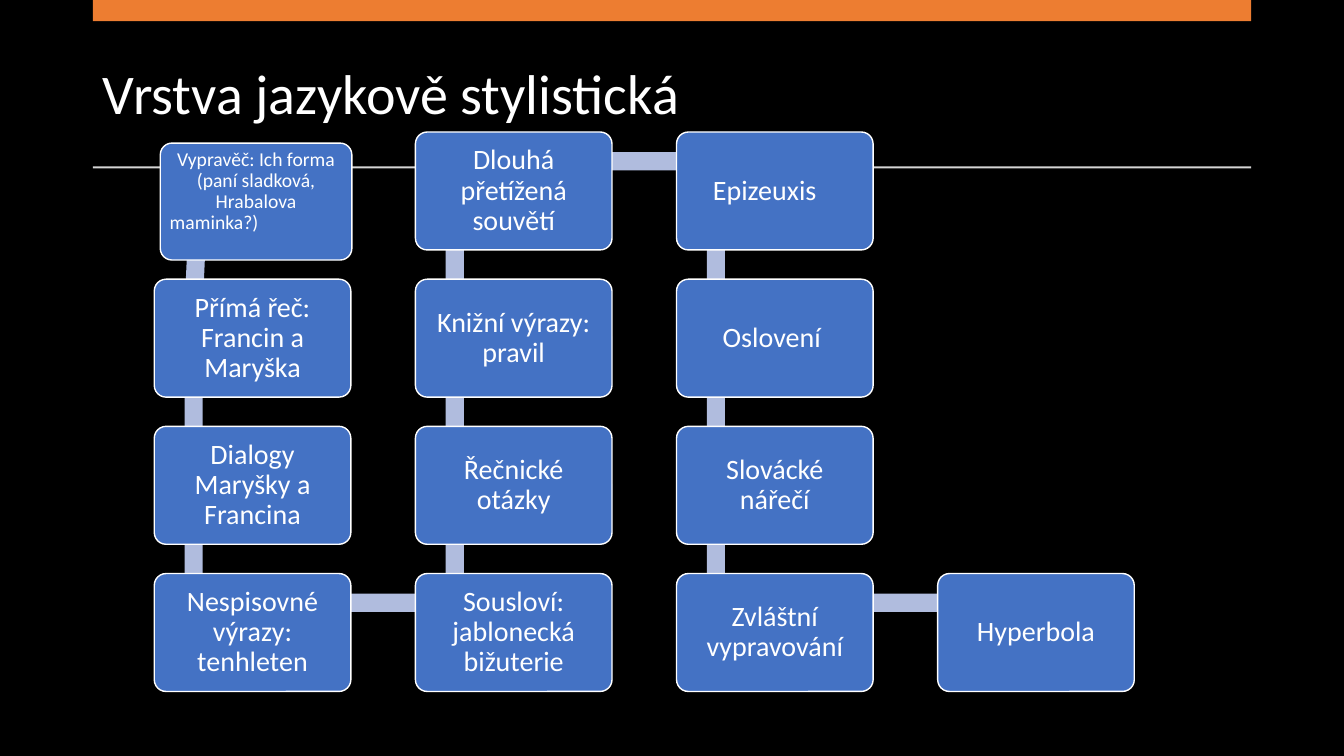
"""Build the slide of language and style features as a snaking chain of boxes."""
import math
from dataclasses import dataclass

from pptx import Presentation
from pptx.dml.color import RGBColor
from pptx.enum import shapes, text
from pptx.util import Inches, Pt


@dataclass(frozen=True)
class Theme:
    background: str = "000000"
    accent: str = "ED7D31"
    rule: str = "D5D5D5"
    link: str = "B0BCDE"
    box: str = "4472C4"
    ink: str = "FFFFFF"
    font: str = "Calibri"
    title_size: int = 40
    box_size: int = 20
    small_size: int = 14


theme = Theme()
presentation = Presentation()
presentation.slide_width, presentation.slide_height = Inches(13.33), Inches(7.5)
slide = presentation.slides.add_slide(presentation.slide_layouts[6])
slide.background.fill.solid()
slide.background.fill.fore_color.rgb = RGBColor.from_string(theme.background)


def add_block(kind, left, top, width, height, color):
    block = slide.shapes.add_shape(
        kind, Inches(left), Inches(top), Inches(width), Inches(height))
    block.shadow.inherit = False
    block.fill.solid()
    block.fill.fore_color.rgb = RGBColor.from_string(color)
    block.line.fill.background()
    return block


def write(holder, wording, size, aligns=("CENTER",), insets=(0.08, 0.08, 0.08, 0.08)):
    frame = holder.text_frame
    frame.word_wrap = True
    frame.vertical_anchor = text.MSO_ANCHOR.MIDDLE
    frame.margin_left, frame.margin_top, frame.margin_right, frame.margin_bottom = map(
        Inches, insets)
    frame.text = wording
    for paragraph, align in zip(frame.paragraphs, aligns):
        paragraph.alignment = text.PP_ALIGN[align]
        paragraph.line_spacing = 0.9
        paragraph.font.size = Pt(size)
        paragraph.font.name = theme.font
        paragraph.font.color.rgb = RGBColor.from_string(theme.ink)


title = slide.shapes.add_textbox(Inches(0.92), Inches(0.37), Inches(11.49), Inches(1.18))
write(title, "Vrstva jazykově stylistická", theme.title_size,
      aligns=("LEFT",), insets=(0.1, 0.05, 0.1, 0.05))
add_block(shapes.MSO_SHAPE.RECTANGLE, 0.92, 0, 11.49, 0.21, theme.accent)
add_block(shapes.MSO_SHAPE.RECTANGLE, 0.92, 1.65, 11.49, 0.02, theme.rule)

grid_left, grid_top = 1.53, 1.31
column_step, row_step = 2.59, 1.46
box_width, box_height = 1.95, 1.17
link_thickness, link_inset_x, link_inset_y = 0.18, 0.39, 0.29

features = [
    (0, 1, "Přímá řeč: Francin a Maryška", {}),
    (0, 2, "Dialogy Maryšky a Francina", {}),
    (0, 3, "Nespisovné výrazy: tenhleten", {}),
    (1, 3, "Sousloví: jablonecká bižuterie", {}),
    (1, 2, "Řečnické otázky", {}),
    (1, 1, "Knižní výrazy: pravil", {}),
    (1, 0, "Dlouhá přetížená souvětí", {}),
    (2, 0, "Epizeuxis", {"insets": (0.08, 0.08, 0.28, 0.08)}),
    (2, 1, "Oslovení", {"insets": (0.08, 0.08, 0.14, 0.08)}),
    (2, 2, "Slovácké nářečí", {}),
    (2, 3, "Zvláštní vypravování", {}),
    (3, 3, "Hyperbola", {}),
]
narrator = (1.59, 1.42, 1.9, 1.16,
            "Vypravěč: Ich forma (paní sladková, Hrabalova\nmaminka?)", theme.small_size,
            {"aligns": ("CENTER", "LEFT"), "insets": (0.06, 0.06, 0.06, 0.26)})
chain = [narrator] + [
    (grid_left + column * column_step, grid_top + row * row_step,
     box_width, box_height, wording, theme.box_size, layout)
    for column, row, wording, layout in features
]

for box, following in zip(chain, chain[1:] + [None]):
    left, top, width, height, wording, size, layout = box
    if following:
        run, drop = following[0] - left, following[1] - top
        length = math.hypot(run, drop)
        link = add_block(
            shapes.MSO_SHAPE.RECTANGLE,
            left + link_inset_x + (run - length) / 2,
            top + link_inset_y + (drop - link_thickness) / 2,
            length, link_thickness, theme.link)
        link.rotation = math.degrees(math.atan2(drop, run)) % 360
    feature = add_block(
        shapes.MSO_SHAPE.ROUNDED_RECTANGLE, left, top, width, height, theme.box)
    feature.adjustments[0] = 0.1
    feature.line.color.rgb = RGBColor.from_string(theme.ink)
    feature.line.width = Pt(1)
    write(feature, wording, size, **layout)

presentation.save("out.pptx")
